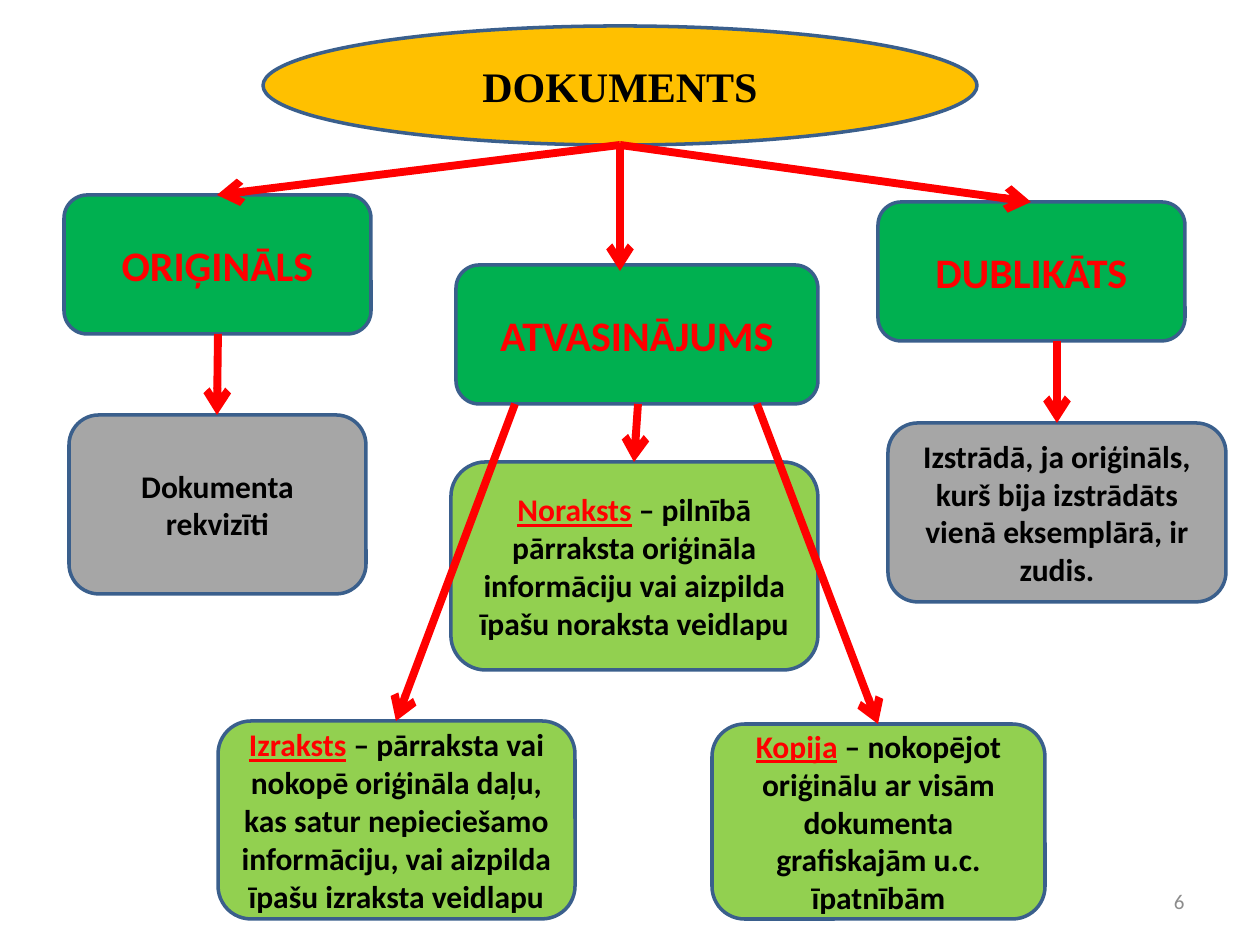
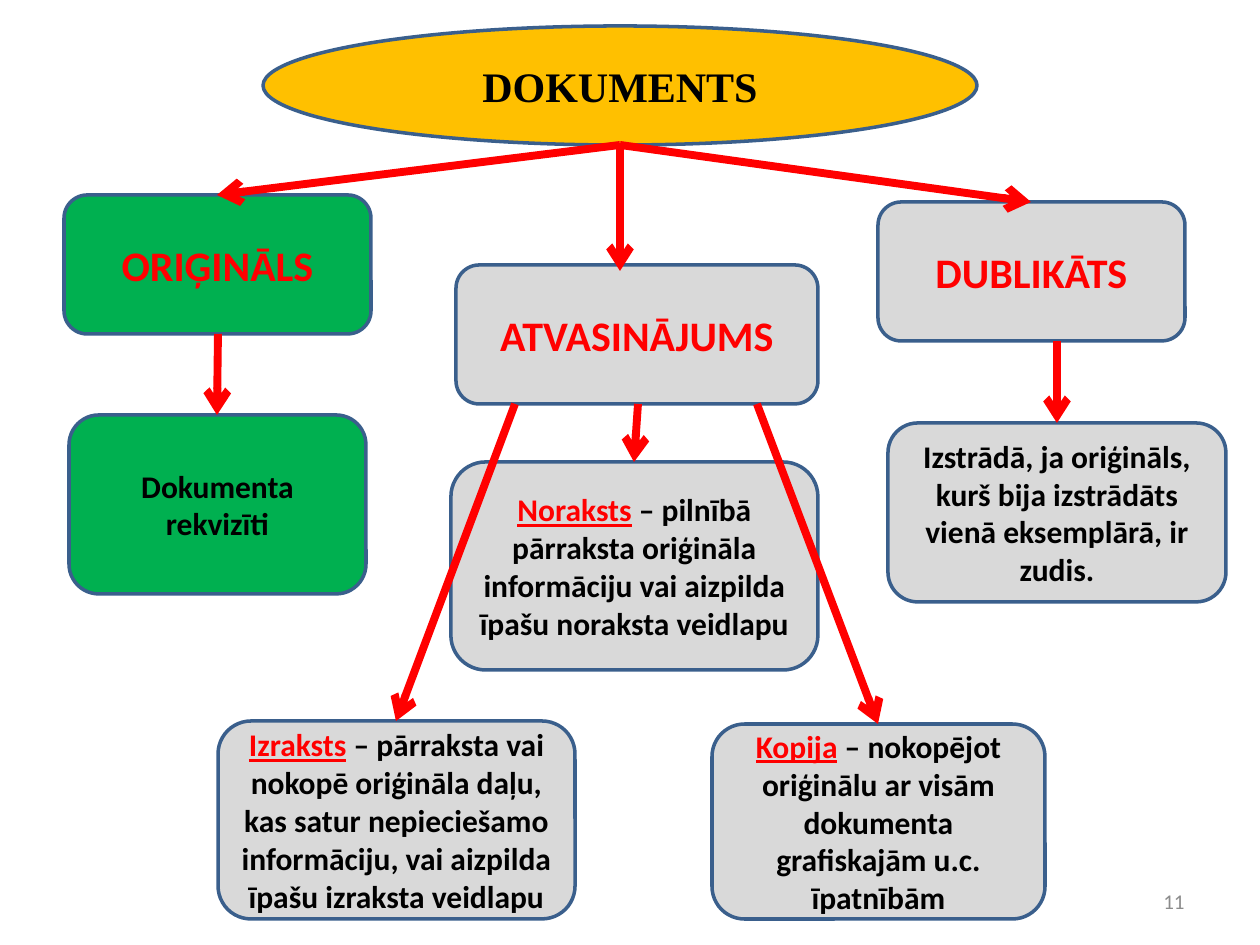
"""Build two document-type diagrams that share a layout and differ in colouring."""
from lxml import etree
from pptx import Presentation
from pptx.dml.color import RGBColor
from pptx.enum.shapes import MSO_CONNECTOR, MSO_SHAPE
from pptx.enum.text import MSO_ANCHOR, PP_ALIGN
from pptx.oxml.ns import qn
from pptx.util import Pt

PX = 914400 // 126
OVAL = MSO_SHAPE.OVAL
ROUND = MSO_SHAPE.ROUNDED_RECTANGLE
CARD = MSO_SHAPE.FLOWCHART_ALTERNATE_PROCESS
STRAIGHT = MSO_CONNECTOR.STRAIGHT
MIDDLE = MSO_ANCHOR.MIDDLE
CENTER, RIGHT = PP_ALIGN.CENTER, PP_ALIGN.RIGHT

COLORS = {
    "gold": "FFC000", "green": "00B050", "lime": "92D050", "grey": "A6A6A6",
    "pale": "D9D9D9", "outline": "3A5F8C", "red": "FF0000", "black": "000000",
    "number": "8C8C8C",
}

TITLE = {"size": 24, "color": "black", "font": "Times New Roman", "bold": True}
HEADING = {"size": 24, "color": "red", "bold": True}
BODY = {"size": 18, "color": "black", "bold": True}

BOXES = {
    "document": (OVAL, (263, 26, 714, 119), TITLE, "", "DOKUMENTS"),
    "original": (ROUND, (64, 195, 307, 139), HEADING, "", "ORIĢINĀLS"),
    "derivative": (ROUND, (456, 265, 362, 139), HEADING, "", "ATVASINĀJUMS"),
    "duplicate": (ROUND, (878, 202, 307, 139), HEADING, "", "DUBLIKĀTS"),
    "requisites": (CARD, (69, 415, 297, 179), BODY, "", "Dokumenta rekvizīti"),
    "replacement": (CARD, (888, 423, 338, 179), BODY, "",
                    "Izstrādā, ja oriģināls, kurš bija izstrādāts vienā eksemplārā, ir zudis."),
    "transcript": (CARD, (451, 462, 367, 208), BODY, "Noraksts",
                   " – pilnībā pārraksta oriģināla informāciju vai aizpilda īpašu noraksta veidlapu"),
    "extract": (CARD, (218, 721, 357, 198), BODY, "Izraksts",
                " – pārraksta vai nokopē oriģināla daļu, kas satur nepieciešamo informāciju, "
                "vai aizpilda īpašu izraksta veidlapu"),
    "copy": (CARD, (712, 724, 333, 195), BODY, "Kopija",
             " – nokopējot oriģinālu ar visām dokumenta grafiskajām u.c. īpatnībām"),
}

ARROWS = [
    ("derivative", 638, "transcript", None),
    ("derivative", 515, "extract", None),
    ("derivative", 757, "copy", None),
    ("original", 218, "requisites", None),
    ("duplicate", 1057, "replacement", None),
    ("document", 620, "derivative", (620, 271)),
    ("document", 620, "original", None),
    ("document", 620, "duplicate", None),
]

FULL_COLORS = {
    "document": "gold",
    **dict.fromkeys(("original", "derivative", "duplicate"), "green"),
    **dict.fromkeys(("requisites", "replacement"), "grey"),
    **dict.fromkeys(("transcript", "extract", "copy"), "lime"),
}
ORIGINAL_COLORS = {
    **dict.fromkeys(BOXES, "pale"),
    "document": "gold", "original": "green", "requisites": "green",
}
SLIDES = [("6", FULL_COLORS), ("11", ORIGINAL_COLORS)]
NUMBER_AREA = (903, 876, 294, 50)


def rgb(name):
    return RGBColor.from_string(COLORS[name])


def emu(values):
    return [v * PX for v in values]


def write(s, text, term="", size=18, color="black", font="Calibri", bold=False, align=CENTER):
    tf = s.text_frame
    tf.word_wrap = True
    tf.vertical_anchor = MIDDLE
    p = tf.paragraphs[0]
    p.alignment = align
    for part, part_color in ((term, "red"), (text, color)):
        if part:
            r = p.add_run()
            r.text = part
            r.font.name = font
            r.font.size = Pt(size)
            r.font.bold = bold
            r.font.underline = part == term
            r.font.color.rgb = rgb(part_color)


def add_box(slide, name, fill):
    kind, area, style, term, text = BOXES[name]
    s = slide.shapes.add_shape(kind, *emu(area))
    s.shadow.inherit = False
    s.fill.solid()
    s.fill.fore_color.rgb = rgb(fill)
    s.line.color.rgb = rgb("outline")
    s.line.width = Pt(2)
    write(s, text, term, **style)


def add_arrow(slide, source, x, target, end):
    _, top, _, height = BOXES[source][1]
    left, target_top, width, _ = BOXES[target][1]
    end = end or (left + width // 2, target_top)
    s = slide.shapes.add_connector(STRAIGHT, *emu((x, top + height, *end)))
    s.line.color.rgb = rgb("red")
    s.line.width = Pt(4.5)
    etree.SubElement(s.line._get_or_add_ln(), qn("a:tailEnd"), type="arrow")
    etree.SubElement(s._element.spPr, qn("a:effectLst"))


def main():
    prs = Presentation()
    prs.slide_width, prs.slide_height = emu((1260, 945))
    for number, fills in SLIDES:
        slide = prs.slides.add_slide(prs.slide_layouts[6])
        for name in BOXES:
            add_box(slide, name, fills[name])
        for arrow in ARROWS:
            add_arrow(slide, *arrow)
        s = slide.shapes.add_textbox(*emu(NUMBER_AREA))
        write(s, number, size=12, color="number", align=RIGHT)
    prs.save("out.pptx")


if __name__ == "__main__":
    main()
